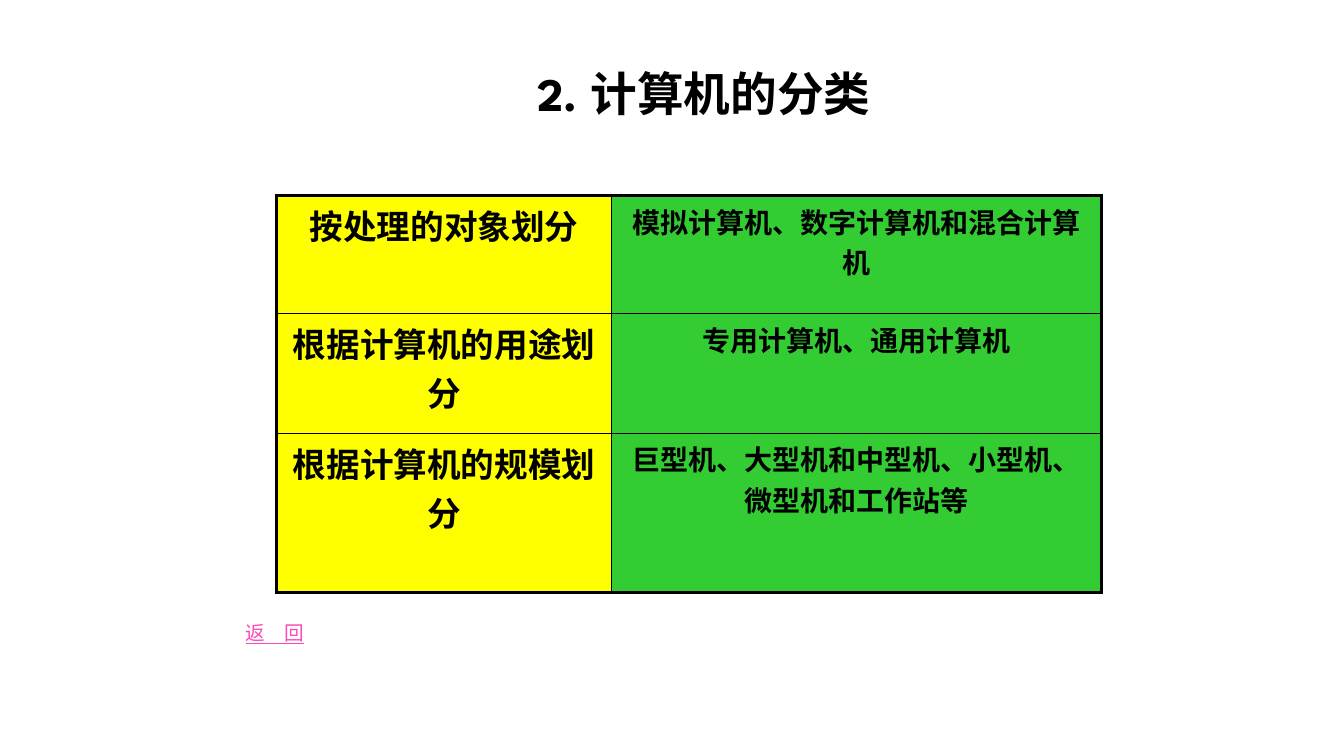
from typing import NamedTuple

from lxml.etree import SubElement
from pptx import Presentation
from pptx.dml.color import RGBColor
from pptx.enum.text import MSO_ANCHOR, MSO_AUTO_SIZE, PP_ALIGN
from pptx.oxml.ns import qn
from pptx.slide import Slide
from pptx.table import _Cell
from pptx.text.text import TextFrame
from pptx.util import Cm, Pt


class TextStyle(NamedTuple):
    font: str
    size: float
    color: str
    bold: bool = False
    underline: bool = False
    alignment: PP_ALIGN = PP_ALIGN.CENTER


class Category(NamedTuple):
    basis: str
    kinds: str
    height: float


class Column(NamedTuple):
    width: float
    fill: str
    style: TextStyle


BLACK = "000000"
OUTER_BORDER, INNER_BORDER = 2.25, 1
TITLE_STYLE = TextStyle("League Spartan", 33.3, BLACK, bold=True)
LINK_STYLE = TextStyle("Times New Roman", 14, "FB4AB6", underline=True,
                       alignment=PP_ALIGN.LEFT)
COLUMNS = [
    Column(8.46, "FFFF00", TextStyle("Arial", 24, BLACK, bold=True)),
    Column(12.34, "33CC33", TextStyle("Arial", 20, BLACK, bold=True)),
]
CATEGORIES = [
    Category("按处理的对象划分", "模拟计算机、数字计算机和混合计算机", 2.97),
    Category("根据计算机的用途划分", "专用计算机、通用计算机", 3.02),
    Category("根据计算机的规模划分", "巨型机、大型机和中型机、小型机、微型机和工作站等", 4.01),
]


def color(value: str) -> RGBColor:
    return RGBColor.from_string(value)


def write_text(frame: TextFrame, text: str, style: TextStyle) -> None:
    frame.word_wrap = True
    paragraph = frame.paragraphs[0]
    paragraph.alignment = style.alignment
    paragraph.space_before = Pt(0)
    run = paragraph.add_run()
    run.text = text
    run.font.name = style.font
    run.font.size = Pt(style.size)
    run.font.bold = style.bold
    run.font.underline = style.underline
    run.font.color.rgb = color(style.color)


def add_border(cell: _Cell, side: str, width: float) -> None:
    """Append one black cell border; side is L, R, T or B, in that order."""
    properties = cell._tc.get_or_add_tcPr()
    line = SubElement(properties, qn(f"a:ln{side}"), w=str(Pt(width)))
    fill = SubElement(line, qn("a:solidFill"))
    SubElement(fill, qn("a:srgbClr"), val=BLACK)


def add_title(slide: Slide) -> None:
    title = slide.shapes.title
    title.left, title.top = Cm(12.34), Cm(1.73)
    title.width, title.height = Cm(10.8), Cm(1.47)
    frame = title.text_frame
    frame.auto_size = MSO_AUTO_SIZE.NONE
    frame.vertical_anchor = MSO_ANCHOR.MIDDLE
    write_text(frame, "2. 计算机的分类", TITLE_STYLE)
    frame.paragraphs[0].line_spacing = 0.8


def add_category_table(slide: Slide) -> None:
    width = sum(column.width for column in COLUMNS)
    height = sum(category.height for category in CATEGORIES)
    table = slide.shapes.add_table(
        len(CATEGORIES), len(COLUMNS),
        Cm(6.96), Cm(4.93), Cm(width), Cm(height)).table
    table.first_row = table.horz_banding = False
    last_row, last_column = len(CATEGORIES) - 1, len(COLUMNS) - 1
    for column_index, column in enumerate(COLUMNS):
        table.columns[column_index].width = Cm(column.width)
    for row_index, category in enumerate(CATEGORIES):
        table.rows[row_index].height = Cm(category.height)
        texts = (category.basis, category.kinds)
        for column_index, (column, text) in enumerate(zip(COLUMNS, texts)):
            cell = table.cell(row_index, column_index)
            outer_sides = {
                "L": column_index == 0,
                "R": column_index == last_column,
                "T": row_index == 0,
                "B": row_index == last_row,
            }
            for side, is_outer in outer_sides.items():
                add_border(cell, side, OUTER_BORDER if is_outer else INNER_BORDER)
            cell.fill.solid()
            cell.fill.fore_color.rgb = color(column.fill)
            write_text(cell.text_frame, text, column.style)


def add_return_label(slide: Slide) -> None:
    label = slide.shapes.add_textbox(Cm(5.94), Cm(15.52), Cm(2.21), Cm(0.84))
    write_text(label.text_frame, "返　回", LINK_STYLE)


def main() -> None:
    presentation = Presentation()
    presentation.slide_width, presentation.slide_height = Cm(33.87), Cm(19.05)
    slide = presentation.slides.add_slide(presentation.slide_layouts[5])
    add_title(slide)
    add_category_table(slide)
    add_return_label(slide)
    presentation.save("out.pptx")


if __name__ == "__main__":
    main()
